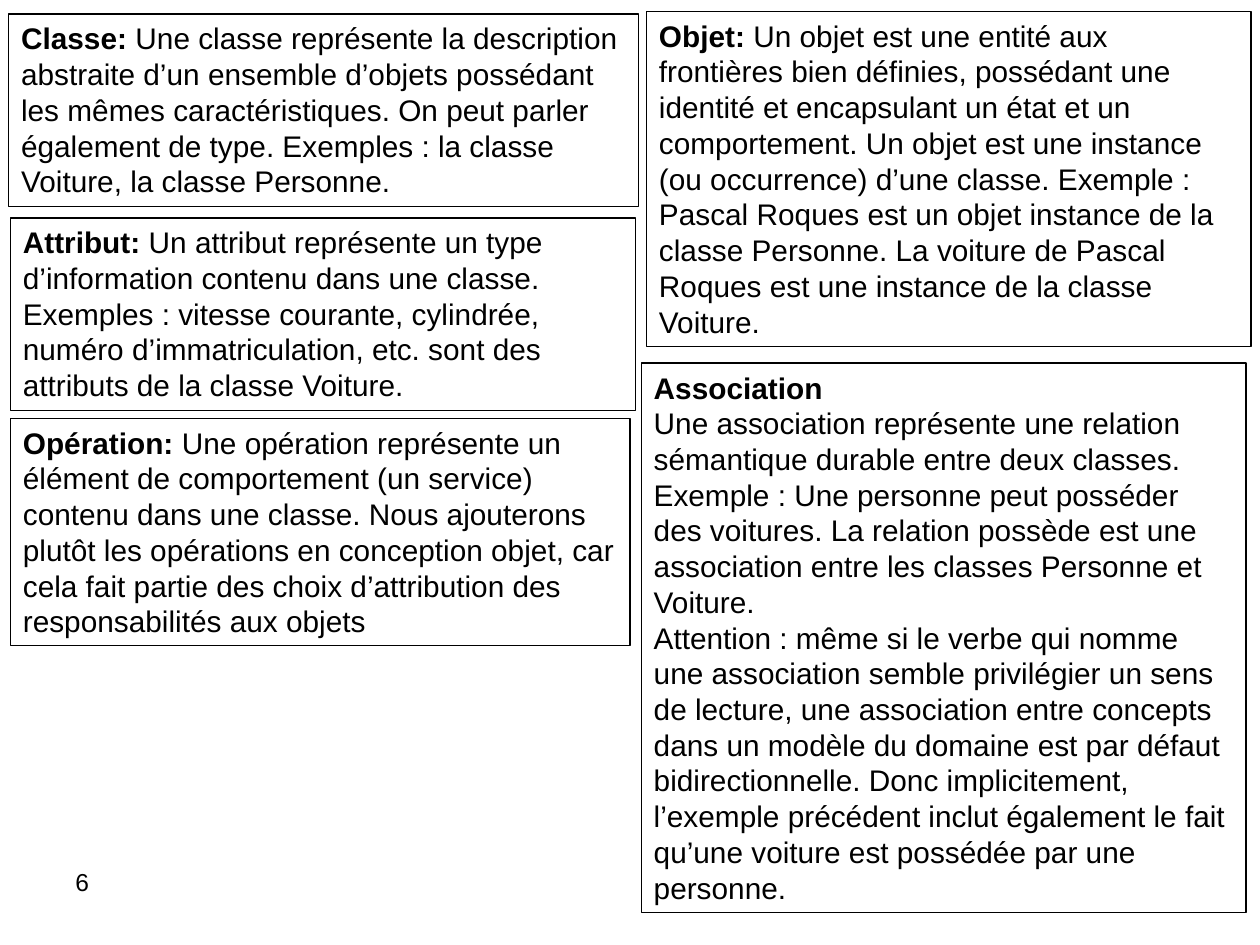
from pptx import Presentation
from pptx.dml.color import RGBColor
from pptx.enum import shapes, text
from pptx.util import Pt

BLACK = "000000"
BODY = {"name": "Arial", "size": Pt(17), "bold": False}
TERM = {**BODY, "bold": True}
NUMBER = {**BODY, "size": Pt(14)}

# (left, top, width, height), term, paragraphs; an empty first paragraph
# leaves the term alone on its line
DEFINITIONS = [
    ((5, 8, 360, 110), "Classe: ", [
        "Une classe représente la description abstraite d’un ensemble d’objets "
        "possédant les mêmes caractéristiques. On peut parler également de type. "
        "Exemples : la classe Voiture, la classe Personne."]),
    ((369.5, 6.5, 345.5, 191.5), "Objet: ", [
        "Un objet est une entité aux frontières bien définies, possédant une "
        "identité et encapsulant un état et un comportement. Un objet est une "
        "instance (ou occurrence) d’une classe. Exemple : Pascal Roques est un "
        "objet instance de la classe Personne. La voiture de Pascal Roques est "
        "une instance de la classe Voiture."]),
    ((6, 124.5, 357, 110), "Attribut: ", [
        "Un attribut représente un type d’information contenu dans une classe. "
        "Exemples : vitesse courante, cylindrée, numéro d’immatriculation, etc. "
        "sont des attributs de la classe Voiture."]),
    ((366.5, 207.5, 345.5, 314), "Association", [
        "",
        "Une association représente une relation sémantique durable entre deux "
        "classes. Exemple : Une personne peut posséder des voitures. La relation "
        "possède est une association entre les classes Personne et Voiture.",
        "Attention : même si le verbe qui nomme une association semble "
        "privilégier un sens de lecture, une association entre concepts dans un "
        "modèle du domaine est par défaut bidirectionnelle. Donc implicitement, "
        "l’exemple précédent inclut également le fait qu’une voiture est "
        "possédée par une personne."]),
    ((6, 239, 354, 130), "Opération: ", [
        "Une opération représente un élément de comportement (un service)",
        "contenu dans une classe. Nous ajouterons plutôt les opérations en "
        "conception objet, car cela fait partie des choix d’attribution des "
        "responsabilités aux objets"]),
]


def color(value):
    return RGBColor.from_string(value)


def add_run(p, words, fmt):
    r = p.add_run()
    r.text = words
    for key, value in fmt.items():
        setattr(r.font, key, value)
    r.font.color.rgb = color(BLACK)


def add_definition(s, box, term, paragraphs):
    sp = s.shapes.add_shape(shapes.MSO_SHAPE.RECTANGLE, *map(Pt, box))
    sp.shadow.inherit = False
    sp.fill.background()
    sp.line.color.rgb = color(BLACK)
    sp.line.width = Pt(0.75)
    tf = sp.text_frame
    tf.word_wrap = True
    tf.auto_size = text.MSO_AUTO_SIZE.SHAPE_TO_FIT_TEXT
    tf.vertical_anchor = text.MSO_ANCHOR.TOP
    for i, words in enumerate(paragraphs):
        p = tf.add_paragraph() if i else tf.paragraphs[0]
        p.alignment = text.PP_ALIGN.LEFT
        if i == 0:
            add_run(p, term, TERM)
        if words:
            add_run(p, words, BODY)


def add_page_number(s, number):
    tf = s.shapes.add_textbox(Pt(36), Pt(492), Pt(168), Pt(37.5)).text_frame
    tf.word_wrap = True
    add_run(tf.paragraphs[0], number, NUMBER)


def main():
    prs = Presentation()
    prs.slide_width, prs.slide_height = Pt(720), Pt(540)
    s = prs.slides.add_slide(prs.slide_layouts[6])
    add_page_number(s, "6")
    for definition in DEFINITIONS:
        add_definition(s, *definition)
    prs.save("out.pptx")


if __name__ == "__main__":
    main()
